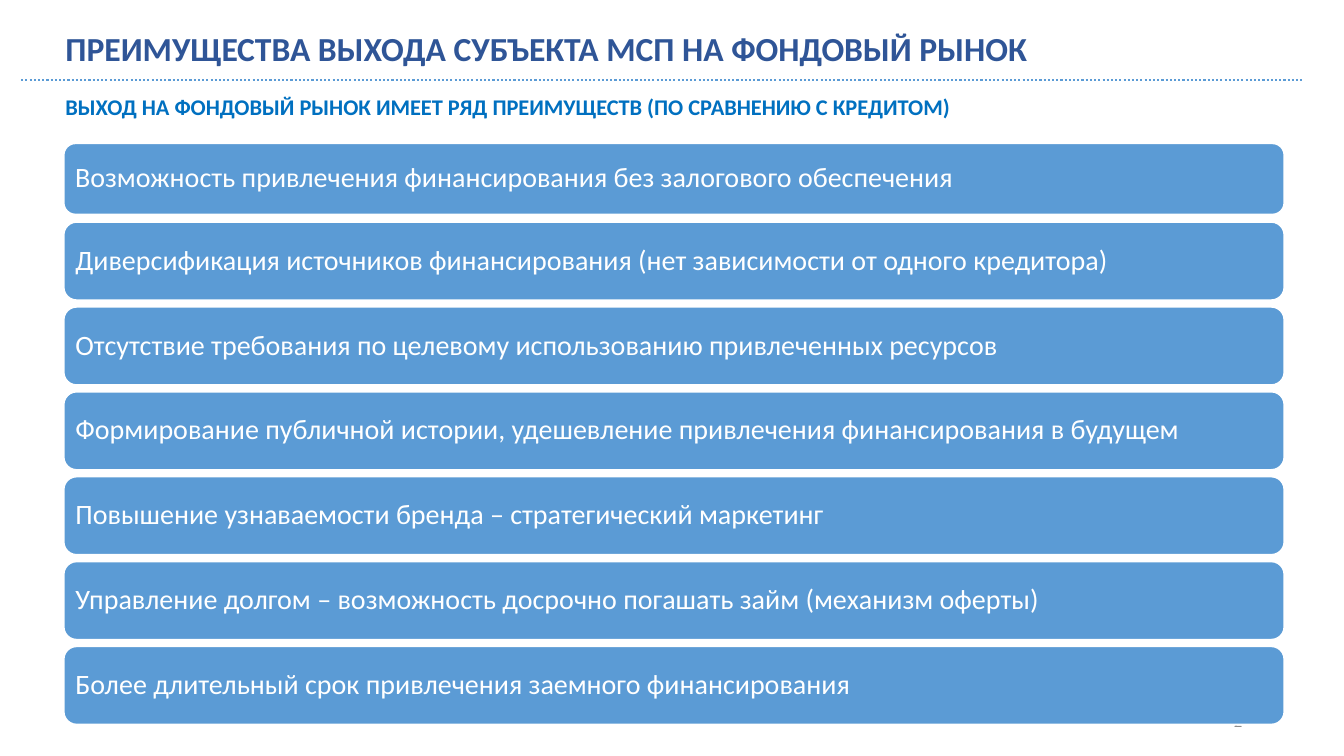
from pptx import Presentation
from pptx.dml.color import RGBColor
from pptx.enum.dml import MSO_LINE
from pptx.enum.shapes import MSO_CONNECTOR, MSO_SHAPE
from pptx.enum.text import MSO_ANCHOR, PP_ALIGN
from pptx.oxml.ns import qn
from pptx.util import Inches, Pt
from lxml import etree

COLORS = {
    "title": "2F5597",
    "subtitle": "0070C0",
    "bar": "5B9BD5",
    "white": "FFFFFF",
    "number": "8C8C8C",
}
FONT = "Calibri"
ADVANTAGES = [
    "Возможность привлечения финансирования без залогового обеспечения",
    "Диверсификация источников финансирования (нет зависимости от одного кредитора)",
    "Отсутствие требования по целевому использованию привлеченных ресурсов",
    "Формирование публичной истории, удешевление привлечения финансирования в будущем",
    "Повышение узнаваемости бренда – стратегический маркетинг",
    "Управление долгом – возможность досрочно погашать займ (механизм оферты)",
    "Более длительный срок привлечения заемного финансирования",
]
FIRST_BAR = (1.42, 0.71)
SECOND_TOP = 2.2
BAR_HEIGHT = 0.78
BAR_STEP = 0.842


def color(name):
    return RGBColor.from_string(COLORS[name])


def write_text(shape, text, size, color_name, bold=False,
               align=PP_ALIGN.LEFT, anchor=MSO_ANCHOR.TOP, spacing=1.0):
    frame = shape.text_frame
    frame.word_wrap = True
    frame.vertical_anchor = anchor
    frame.text = text
    para = frame.paragraphs[0]
    para.alignment = align
    para.line_spacing = spacing
    span = para.runs[0]
    span.font.name = FONT
    span.font.size = Pt(size)
    span.font.bold = bold
    span.font.color.rgb = color(color_name)


def add_text(page, bounds, text, size, color_name, **options):
    box = page.shapes.add_textbox(*map(Inches, bounds))
    write_text(box, text, size, color_name, **options)


def add_divider(page, left, right, top):
    line = page.shapes.add_connector(
        MSO_CONNECTOR.STRAIGHT, Inches(left), Inches(top), Inches(right), Inches(top))
    line.line.color.rgb = color("bar")
    line.line.width = Pt(1.5)
    line.line.dash_style = MSO_LINE.ROUND_DOT
    etree.SubElement(line._element.spPr, qn("a:effectLst"))


def add_bar(page, top, height, text):
    bar = page.shapes.add_shape(
        MSO_SHAPE.ROUNDED_RECTANGLE, Inches(0.63), Inches(top), Inches(12.11), Inches(height))
    bar.shadow.inherit = False
    bar.fill.solid()
    bar.fill.fore_color.rgb = color("bar")
    bar.line.color.rgb = color("white")
    bar.line.width = Pt(1.5)
    frame = bar.text_frame
    frame.margin_left = frame.margin_right = Inches(0.08)
    frame.margin_top = frame.margin_bottom = Inches(0.08)
    write_text(bar, text, 20, "white", anchor=MSO_ANCHOR.MIDDLE, spacing=0.9)


def main():
    deck = Presentation()
    deck.slide_width = Inches(13.33)
    deck.slide_height = Inches(7.5)
    page = deck.slides.add_slide(deck.slide_layouts[6])

    add_divider(page, 0.21, 12.93, 0.79)
    add_text(page, (0.55, 0.27, 12.58, 0.3),
             "ПРЕИМУЩЕСТВА ВЫХОДА СУБЪЕКТА МСП НА ФОНДОВЫЙ РЫНОК",
             24, "title", bold=True, spacing=0.9)
    add_text(page, (0.55, 0.88, 12.84, 0.37),
             "ВЫХОД НА ФОНДОВЫЙ РЫНОК ИМЕЕТ РЯД ПРЕИМУЩЕСТВ (ПО СРАВНЕНИЮ С КРЕДИТОМ)",
             16, "subtitle", bold=True)
    add_text(page, (9.42, 6.95, 3, 0.4), "2", 12, "number",
             align=PP_ALIGN.RIGHT, anchor=MSO_ANCHOR.MIDDLE)

    add_bar(page, *FIRST_BAR, ADVANTAGES[0])
    for index, advantage in enumerate(ADVANTAGES[1:]):
        add_bar(page, SECOND_TOP + index * BAR_STEP, BAR_HEIGHT, advantage)

    deck.save("out.pptx")


if __name__ == "__main__":
    main()
